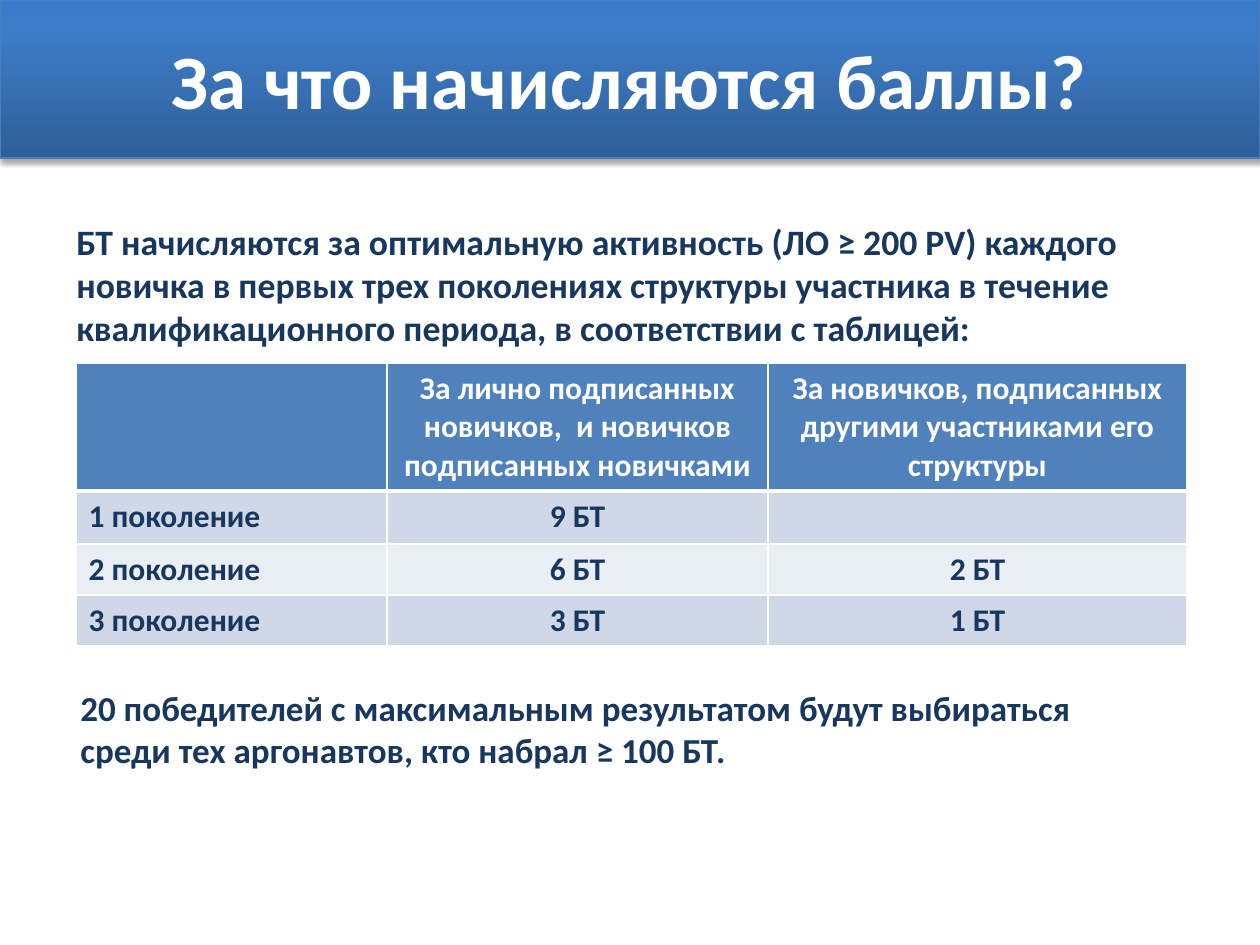
"""Build the slide that explains how contest points are awarded."""
from typing import NamedTuple

from lxml.etree import SubElement as Sub
from pptx import Presentation
from pptx.dml.color import RGBColor as Rgb
from pptx.enum.shapes import MSO_SHAPE as Kind
from pptx.enum.text import MSO_ANCHOR as Anchor, PP_ALIGN as Align
from pptx.oxml.ns import qn
from pptx.util import Emu, Pt

SCALE = 914400 / 126
FONT = "Calibri"
HUES = {
    "white": "FFFFFF", "navy": "17375E", "edge": "4B7EBC", "shade": "000000",
    "low": "2F5F99", "mid": "3D7CC7", "top": "3A7CCB",
    "head": "4F81BD", "odd": "D0D8E8", "even": "E9EDF4",
}


class Box(NamedTuple):
    left: int
    top: int
    width: int
    height: int


class Note(NamedTuple):
    box: Box
    text: str
    size: float
    wrap: bool


STOPS = [(0, "low"), (80, "mid"), (100, "top")]
BANNER = Box(0, 0, 1260, 158)
TITLE = "За что начисляются баллы?"
NOTES = [
    Note(Box(64, 214, 1134, 125),
         "БТ начисляются за оптимальную активность (ЛО ≥ 200 PV) каждого новичка "
         "в первых трех поколениях структуры участника в течение "
         "квалификационного периода, в соответствии с таблицей:", 20.4, True),
    Note(Box(68, 680, 1023, 97),
         "20 победителей с максимальным результатом будут выбираться\v"
         "среди тех аргонавтов, кто набрал ≥ 100 БТ.", 20, False),
]
GRID = Box(76, 363, 1111, 281)
COLS = [311, 381, 419]
ROWS = [126, 53, 51, 51]
CELLS = [
    ["", "За лично подписанных новичков,  и новичков подписанных новичками",
     "За новичков, подписанных другими участниками его структуры"],
    ["1 поколение", "9 БТ", ""],
    ["2 поколение", "6 БТ", "2 БТ"],
    ["3 поколение", "3 БТ", "1 БТ"],
]


def px(num: int) -> Emu:
    """Turn pixels into EMU."""
    return Emu(round(num * SCALE))


def place(box: Box) -> list[Emu]:
    """Turn a box into EMU lengths."""
    return [px(num) for num in box]


def tint(node, hue: str):
    """Add a colour element and return it."""
    return Sub(node, qn("a:srgbClr"), val=HUES[hue])


def style(frame, text: str, size: float, hue: str, align=Align.LEFT) -> None:
    """Fill a text frame with one bold paragraph."""
    para = frame.paragraphs[0]
    para.text = text
    para.alignment = align
    for run in para.runs:
        font = run.font
        font.name, font.size, font.bold = FONT, Pt(size), True
        font.color.rgb = Rgb.from_string(HUES[hue])


def draw_banner(slide) -> None:
    """Draw the title band with its gradient and shadow."""
    band = slide.shapes.add_shape(Kind.RECTANGLE, *place(BANNER))
    band.line.color.rgb = Rgb.from_string(HUES["edge"])
    band.line.width = Pt(0.75)
    band.shadow.inherit = False
    props = band.element.spPr
    blend = Sub(props, qn("a:gradFill"), rotWithShape="1")
    stops = Sub(blend, qn("a:gsLst"))
    for pos, hue in STOPS:
        tint(Sub(stops, qn("a:gs"), pos=str(pos * 1000)), hue)
    Sub(blend, qn("a:lin"), ang="16200000", scaled="0")
    props.find(qn("a:ln")).addprevious(blend)
    drop = Sub(props.find(qn("a:effectLst")), qn("a:outerShdw"),
               blurRad=str(Pt(3.1)), dist=str(Pt(1.8)), dir="5400000",
               rotWithShape="0")
    Sub(tint(drop, "shade"), qn("a:alpha"), val="35000")
    band.text_frame.word_wrap = True
    band.text_frame.vertical_anchor = Anchor.MIDDLE
    style(band.text_frame, TITLE, 44, "white", Align.CENTER)


def draw_note(slide, note: Note) -> None:
    """Draw one block of body text."""
    frame = slide.shapes.add_textbox(*place(note.box)).text_frame
    frame.word_wrap = note.wrap
    style(frame, note.text, note.size, "navy")


def rule(cell, row: int) -> None:
    """Draw white borders, thick under the header row."""
    props = cell._tc.get_or_add_tcPr()
    for side in "LRTB":
        thick = (row, side) in [(0, "B"), (1, "T")]
        line = Sub(props, qn(f"a:ln{side}"), w=str(Pt(3 if thick else 1)))
        tint(Sub(line, qn("a:solidFill")), "white")


def draw_table(slide) -> None:
    """Draw the table of points by generation."""
    table = slide.shapes.add_table(len(ROWS), len(COLS), *place(GRID)).table
    for col, width in zip(table.columns, COLS):
        col.width = px(width)
    for num, (row, height) in enumerate(zip(table.rows, ROWS)):
        row.height = px(height)
        fill = "head" if num == 0 else "odd" if num % 2 else "even"
        for pos, (cell, text) in enumerate(zip(row.cells, CELLS[num])):
            rule(cell, num)
            cell.fill.solid()
            cell.fill.fore_color.rgb = Rgb.from_string(HUES[fill])
            style(cell.text_frame, text, 18, "navy" if num else "white",
                  Align.CENTER if pos else Align.LEFT)


def main() -> None:
    """Build and save the slide."""
    deck = Presentation()
    deck.slide_width, deck.slide_height = px(1260), px(945)
    slide = deck.slides.add_slide(deck.slide_layouts[6])
    draw_banner(slide)
    draw_table(slide)
    for note in NOTES:
        draw_note(slide, note)
    deck.save("out.pptx")


if __name__ == "__main__":
    main()
